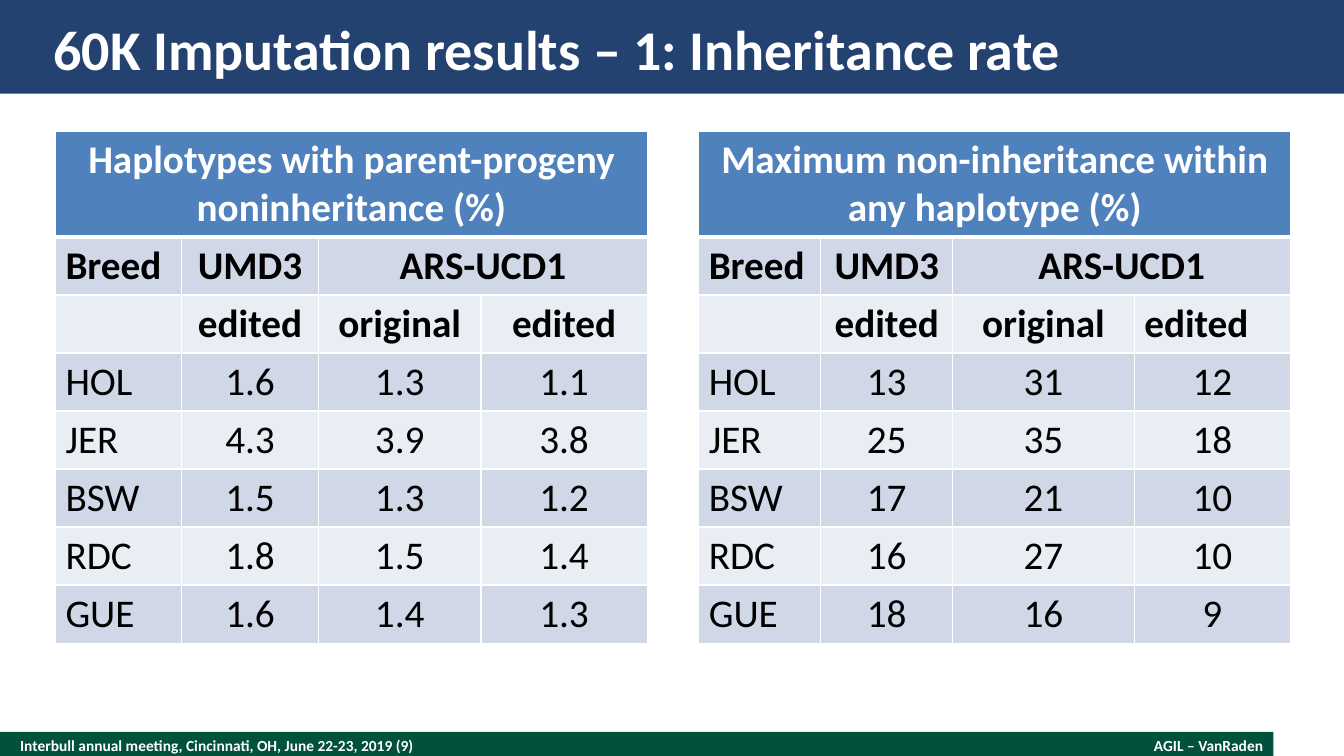
"""Build the slide on inheritance rates from 60K imputation."""
from dataclasses import dataclass

from lxml import etree
from pptx import Presentation
from pptx.dml.color import RGBColor
from pptx.enum.shapes import MSO_SHAPE
from pptx.enum.text import MSO_ANCHOR, MSO_AUTO_SIZE, PP_ALIGN
from pptx.oxml.ns import qn
from pptx.slide import Slide
from pptx.table import _Cell
from pptx.text.text import TextFrame
from pptx.util import Inches, Pt

LEFT, CENTER, RIGHT = PP_ALIGN.LEFT, PP_ALIGN.CENTER, PP_ALIGN.RIGHT
MIDDLE = MSO_ANCHOR.MIDDLE
NO_AUTOFIT = MSO_AUTO_SIZE.NONE
RECTANGLE = MSO_SHAPE.RECTANGLE
TITLE_ONLY = 5


@dataclass(frozen=True)
class Theme:
    font: str = "Calibri"
    title_size: int = 40
    table_size: int = 28
    footer_size: int = 11
    white: str = "FFFFFF"
    black: str = "000000"
    navy: str = "244270"
    green: str = "00523C"
    heading: str = "4F81BD"
    bands: tuple[str, str] = ("D0D8E8", "E9EDF4")
    thin: float = 1
    thick: float = 3


@dataclass(frozen=True)
class Box:
    left: float
    top: float
    width: float
    height: float

    def lengths(self) -> list[int]:
        return [Inches(v) for v in (self.left, self.top, self.width, self.height)]


@dataclass(frozen=True)
class Bar:
    box: Box
    color: str


@dataclass(frozen=True)
class FooterText:
    box: Box
    text: str
    align: PP_ALIGN


@dataclass(frozen=True)
class ResultTable:
    left: float
    heading: str
    widths: tuple[float, ...]
    rates: tuple[tuple[str, ...], ...]
    last_label_align: PP_ALIGN = CENTER


THEME = Theme()
TABLE_TOP, HEADING_HEIGHT, ROW_HEIGHT = 1.3, 1.04, 0.57
TITLE = "60K Imputation results – 1: Inheritance rate"
TITLE_BOX = Box(0.53, 0.13, 12.27, 0.7)
BARS = (
    Bar(Box(0, 7.26, 12.63, 0.27), THEME.green),
    Bar(Box(0, 0, 13.33, 0.93), THEME.navy),
)
FOOTERS = (
    FooterText(Box(0.2, 7.26, 8.67, 0.27),
               "Interbull annual meeting, Cincinnati, OH, June 22-23, 2019 (9)", LEFT),
    FooterText(Box(9.6, 7.3, 2.93, 0.19), "AGIL – VanRaden", RIGHT),
)
COLUMN_LABELS = (
    ("Breed", "UMD3", "ARS-UCD1", ""),
    ("", "edited", "original", "edited"),
)
TABLES = (
    ResultTable(
        0.55, "Haplotypes with parent-progeny noninheritance (%)",
        (1.25, 1.36, 1.61, 1.65),
        (("HOL", "1.6", "1.3", "1.1"),
         ("JER", "4.3", "3.9", "3.8"),
         ("BSW", "1.5", "1.3", "1.2"),
         ("RDC", "1.8", "1.5", "1.4"),
         ("GUE", "1.6", "1.4", "1.3"))),
    ResultTable(
        6.93, "Maximum non-inheritance within any haplotype (%)",
        (1.21, 1.31, 1.8, 1.55),
        (("HOL", "13", "31", "12"),
         ("JER", "25", "35", "18"),
         ("BSW", "17", "21", "10"),
         ("RDC", "16", "27", "10"),
         ("GUE", "18", "16", "9")),
        LEFT),
)


def write_text(frame: TextFrame, text: str, *, size: int, color: str = THEME.white,
               bold: bool = True, align: PP_ALIGN = LEFT) -> None:
    paragraph = frame.paragraphs[0]
    paragraph.alignment = align
    run = paragraph.add_run()
    run.text = text
    run.font.name = THEME.font
    run.font.size = Pt(size)
    run.font.bold = bold
    run.font.color.rgb = RGBColor.from_string(color)


def fit_frame(frame: TextFrame) -> None:
    frame.margin_left = frame.margin_top = frame.margin_right = frame.margin_bottom = 0
    frame.vertical_anchor = MIDDLE
    frame.word_wrap = True
    frame.auto_size = NO_AUTOFIT


def add_bar(slide: Slide, bar: Bar) -> None:
    band = slide.shapes.add_shape(RECTANGLE, *bar.box.lengths())
    band.shadow.inherit = False
    band.fill.solid()
    band.fill.fore_color.rgb = RGBColor.from_string(bar.color)
    band.line.fill.background()


def add_footer(slide: Slide, footer: FooterText) -> None:
    frame = slide.shapes.add_textbox(*footer.box.lengths()).text_frame
    fit_frame(frame)
    write_text(frame, footer.text, size=THEME.footer_size, align=footer.align)


def place_title(slide: Slide) -> None:
    title = slide.shapes.title
    title.left, title.top, title.width, title.height = TITLE_BOX.lengths()
    title.element.getparent().append(title.element)
    fit_frame(title.text_frame)
    write_text(title.text_frame, TITLE, size=THEME.title_size)


def style_cell(cell: _Cell, color: str, top: float, bottom: float) -> None:
    properties = cell._tc.get_or_add_tcPr()
    edges = {"a:lnL": THEME.thin, "a:lnR": THEME.thin, "a:lnT": top, "a:lnB": bottom}
    for tag, width in edges.items():
        edge = etree.SubElement(properties, qn(tag), w=str(Pt(width)))
        fill = etree.SubElement(edge, qn("a:solidFill"))
        etree.SubElement(fill, qn("a:srgbClr"), val=THEME.white)
    cell.fill.solid()
    cell.fill.fore_color.rgb = RGBColor.from_string(color)


def add_result_table(slide: Slide, result: ResultTable) -> None:
    rows = ((result.heading, "", "", ""), *COLUMN_LABELS, *result.rates)
    heights = [HEADING_HEIGHT] + [ROW_HEIGHT] * (len(rows) - 1)
    box = Box(result.left, TABLE_TOP, sum(result.widths), sum(heights))
    table = slide.shapes.add_table(len(rows), len(result.widths), *box.lengths()).table
    for column, width in zip(table.columns, result.widths):
        column.width = Inches(width)
    for table_row, height in zip(table.rows, heights):
        table_row.height = Inches(height)
    table.cell(0, 0).merge(table.cell(0, 3))
    table.cell(1, 2).merge(table.cell(1, 3))
    for r, texts in enumerate(rows):
        heading = r == 0
        for c, text in enumerate(texts):
            cell = table.cell(r, c)
            style_cell(cell, THEME.heading if heading else THEME.bands[(r - 1) % 2],
                       THEME.thick if r == 1 else THEME.thin,
                       THEME.thick if heading else THEME.thin)
            if not text:
                continue
            align = CENTER if heading or c > 0 else LEFT
            if (r, c) == (2, 3):
                align = result.last_label_align
            write_text(cell.text_frame, text, size=THEME.table_size,
                       color=THEME.white if heading else THEME.black,
                       bold=r <= len(COLUMN_LABELS), align=align)


def main() -> None:
    deck = Presentation()
    deck.slide_width, deck.slide_height = Inches(13.33), Inches(7.5)
    slide = deck.slides.add_slide(deck.slide_layouts[TITLE_ONLY])
    for bar in BARS:
        add_bar(slide, bar)
    for footer in FOOTERS:
        add_footer(slide, footer)
    place_title(slide)
    for result in TABLES:
        add_result_table(slide, result)
    deck.save("out.pptx")


if __name__ == "__main__":
    main()
